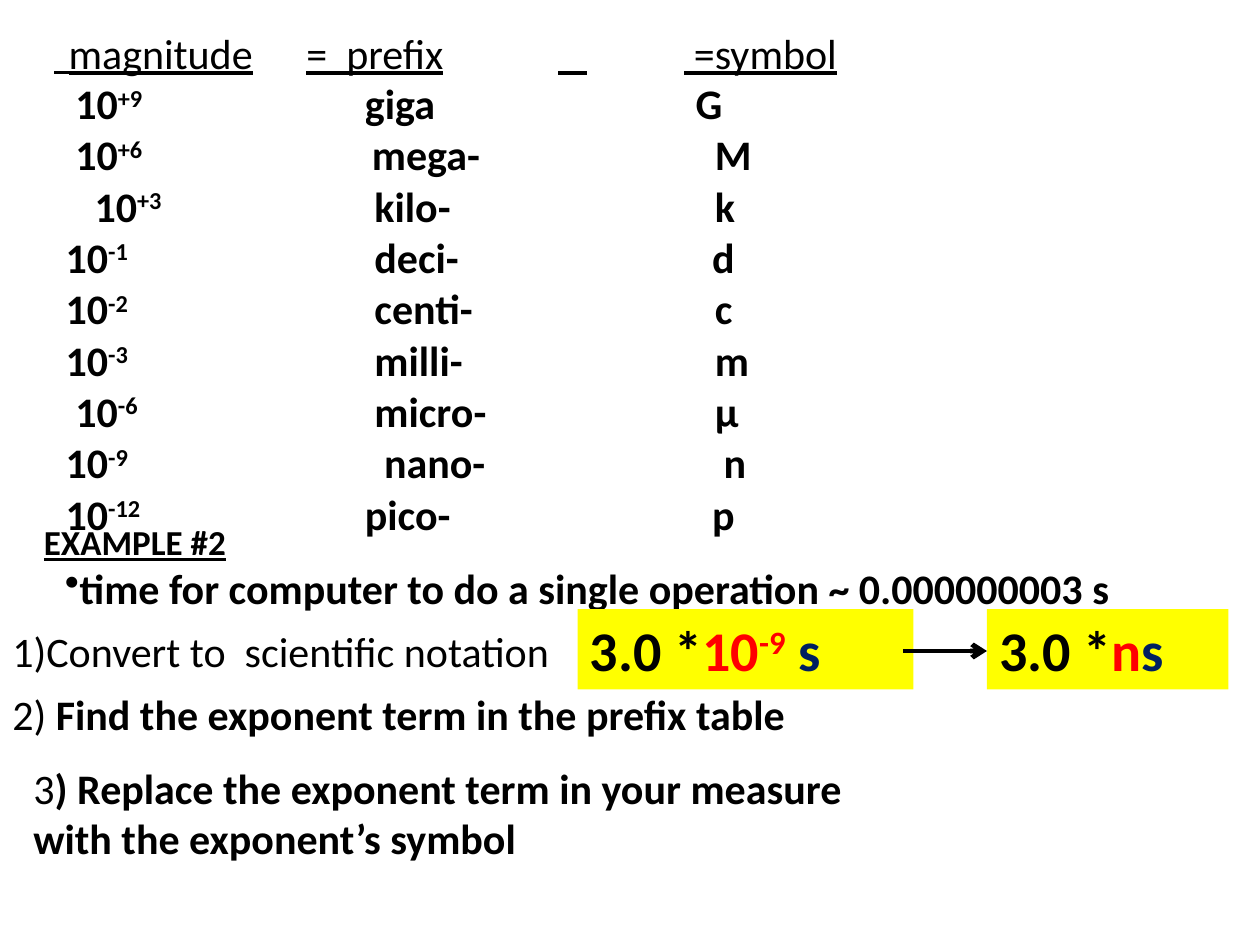
from lxml.etree import SubElement
from pptx import Presentation
from pptx.dml.color import RGBColor
from pptx.enum.shapes import MSO_CONNECTOR, MSO_SHAPE
from pptx.enum.text import PP_ALIGN
from pptx.oxml.ns import qn
from pptx.util import Pt

COLORS = {"black": "000000", "red": "FF0000", "navy": "002060", "yellow": "FFFF00"}
FONT = "Calibri"
BOLD = {"bold": True}
SUP = {"bold": True, "sup": True}
TAB_SIZE = 72

HEADER = [("  ", {"size": 18, "underline": True}),
          ("magnitude\t=  prefix\t   \t =symbol", {"underline": True})]

TABLE_LEFT, TABLE_TOP = 37.5, 45.6
COLUMN_WIDTHS = (171, 189, 120)
ROW_HEIGHT = 28.8
PREFIXES = [
    ("+9", "giga", "G", (5.5, 0, 0)),
    ("+6", "mega-", "M", (5.5, 4, 11)),
    ("+3", "kilo-", "k", (16.5, 5.5, 11)),
    ("-1", "deci-", "d", (0, 5.5, 9.5)),
    ("-2", "centi-", "c", (0, 5.5, 11)),
    ("-3", "milli-", "m", (0, 5.5, 11)),
    ("-6", "micro-", "μ", (5.5, 5.5, 11)),
    ("-9", "nano-", "n", (0, 11, 16)),
    ("-12", "pico-", "p", (0, 0, 9.5)),
]

TIME = [("time for computer to do a single operation ~ 0.000000003 s", BOLD)]
EXAMPLE = [("EXAMPLE #2", {"size": 20, "bold": True, "underline": True})]
STEPS = [
    ((0, 354, 336, 36), [("1)Convert to  scientific notation", {})]),
    ((0, 390, 486, 36), [("2) ", {}), ("Find the exponent term in the prefix table", BOLD)]),
    ((12, 432, 522, 65.5), [
        ("3", {}),
        (") Replace the exponent term in your measure with the exponent’s symbol", BOLD)]),
]

BIG = {"size": 32, "bold": True}
RED = {**BIG, "color": "red"}
NAVY = {**BIG, "color": "navy"}
RESULTS = [
    ((330, 348, 192, 46), [("3.0 *", BIG), ("10", RED), ("-9", {**RED, "sup": True}), (" s", NAVY)]),
    ((564, 348, 138, 46), [("3.0 *", BIG), ("n", RED), ("s", NAVY)]),
]


def add_runs(p, runs):
    for text, style in runs:
        r = p.add_run()
        r.text = text
        r.font.name = FONT
        r.font.size = Pt(style.get("size", 24))
        r.font.bold = style.get("bold", False)
        r.font.underline = style.get("underline", False)
        r.font.color.rgb = RGBColor.from_string(COLORS[style.get("color", "black")])
        if style.get("sup"):
            r.font._element.set("baseline", "30000")


def add_text(slide, box, runs):
    tf = slide.shapes.add_textbox(*map(Pt, box)).text_frame
    tf.word_wrap = True
    add_runs(tf.paragraphs[0], runs)
    return tf


def set_default_tabs(prs):
    for root in (prs.element, prs.slide_master.element):
        for level in root.iter():
            if level.get("defTabSz"):
                level.set("defTabSz", str(int(Pt(TAB_SIZE))))


def add_prefix_table(slide):
    box = (TABLE_LEFT, TABLE_TOP, sum(COLUMN_WIDTHS), ROW_HEIGHT * len(PREFIXES))
    table = slide.shapes.add_table(len(PREFIXES), len(COLUMN_WIDTHS), *map(Pt, box)).table
    table.first_row = table.horz_banding = False
    for column, width in zip(table.columns, COLUMN_WIDTHS):
        column.width = Pt(width)
    for row, (power, prefix, symbol, offsets) in zip(table.rows, PREFIXES):
        row.height = Pt(ROW_HEIGHT)
        contents = ([("10", BOLD), (power, SUP)], [(prefix, BOLD)], [(symbol, BOLD)])
        for cell, runs, offset in zip(row.cells, contents, offsets):
            cell.fill.background()
            cell.margin_left = Pt(offset)
            cell.margin_right = cell.margin_top = cell.margin_bottom = 0
            add_runs(cell.text_frame.paragraphs[0], runs)


def add_result(slide, box, runs):
    sp = slide.shapes.add_shape(MSO_SHAPE.RECTANGLE, *map(Pt, box))
    sp.shadow.inherit = False
    sp.fill.solid()
    sp.fill.fore_color.rgb = RGBColor.from_string(COLORS["yellow"])
    sp.line.fill.background()
    p = sp.text_frame.paragraphs[0]
    p.alignment = PP_ALIGN.LEFT
    add_runs(p, runs)


def add_arrow(slide, x1, x2, y):
    arrow = slide.shapes.add_connector(MSO_CONNECTOR.STRAIGHT, Pt(x1), Pt(y), Pt(x2), Pt(y))
    arrow.line.width = Pt(2.75)
    arrow.line.color.rgb = RGBColor.from_string(COLORS["black"])
    SubElement(arrow.line._get_or_add_ln(), qn("a:tailEnd"), type="arrow")
    SubElement(arrow._element.spPr, qn("a:effectLst"))


def main():
    prs = Presentation()
    prs.slide_width, prs.slide_height = Pt(720), Pt(540)
    set_default_tabs(prs)
    slide = prs.slides.add_slide(prs.slide_layouts[6])
    add_prefix_table(slide)
    add_text(slide, (24, 12, 564, 65.5), HEADER)
    tf = add_text(slide, (30, 318, 648, 36), TIME)
    SubElement(tf.paragraphs[0]._p.get_or_add_pPr(), qn("a:buChar"), char="•")
    add_text(slide, (18, 294, 168, 31.5), EXAMPLE)
    for box, runs in STEPS:
        add_text(slide, box, runs)
    for box, runs in RESULTS:
        add_result(slide, box, runs)
    add_arrow(slide, 516, 564, 372)
    prs.save("out.pptx")


if __name__ == "__main__":
    main()
